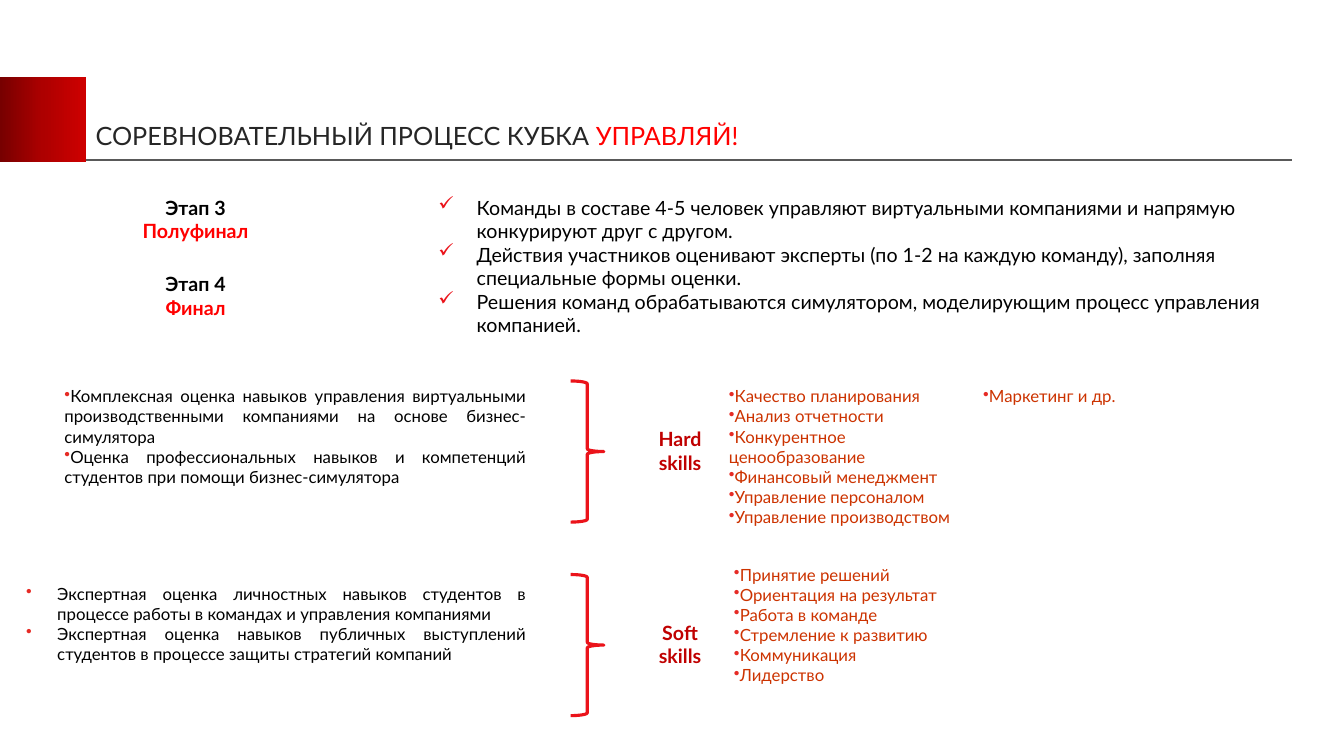
import copy

import pptx
import pptx.dml.color
import pptx.enum.shapes
import pptx.enum.text
import pptx.oxml.ns
import pptx.oxml.xmlchemy
import pptx.util

PX = 9144  # EMU in one px, 100 px to the inch
ALIGN = pptx.enum.text.PP_ALIGN
SHAPE = pptx.enum.shapes.MSO_SHAPE
qn = pptx.oxml.ns.qn
element = pptx.oxml.xmlchemy.OxmlElement


class Theme:
    face = "Lato"
    title, head, body = 18, 14, 12
    black, gray, rule = "000000", "262626", "595959"
    red, dark, rust = "FF0000", "C00000", "CC3300"
    brace, dot = "EB131A", "E62B25"
    fade = ((0, "770000"), (0.5, "AD0000"), (1, "CE0000"))


def emu(*sizes):
    return [pptx.util.Emu(size * PX) for size in sizes]


def rgb(color):
    return pptx.dml.color.RGBColor.from_string(color)


def apply(target, values):
    for name, value in values.items():
        setattr(target, name, value)


def add_mark(para, mark, color, left, indent):
    """Give a paragraph a coloured bullet and its indents in px."""
    props = para._p.get_or_add_pPr()
    props.set("marL", str(left * PX))
    props.set("indent", str(indent * PX))
    tint = element("a:buClr")
    value = element("a:srgbClr")
    value.set("val", color)
    tint.append(value)
    sign = element("a:buChar")
    sign.set("char", mark)
    props.extend([tint, sign])


def add_text(slide, box, lines, size, bold=False, align=ALIGN.LEFT,
             mark=None, cols=1):
    """Each line is a list of (text, colour) runs."""
    frame = slide.shapes.add_textbox(*emu(*box)).text_frame
    apply(frame, {"word_wrap": True,
                  "auto_size": pptx.enum.text.MSO_AUTO_SIZE.SHAPE_TO_FIT_TEXT})
    if cols > 1:
        frame._txBody.bodyPr.set("numCol", str(cols))
    for index, line in enumerate(lines):
        para = frame.add_paragraph() if index else frame.paragraphs[0]
        para.alignment = align
        if mark:
            add_mark(para, *mark)
        for text, color in line:
            run = para.add_run()
            run.text = text
            apply(run.font, {"name": Theme.face, "bold": bold,
                             "size": pptx.util.Pt(size)})
            run.font.color.rgb = rgb(color)


def add_label(slide, box, *line):
    add_text(slide, box, [[run] for run in line], Theme.head, True, ALIGN.CENTER)


def add_list(slide, box, items, color, mark, size=Theme.body, **form):
    add_text(slide, box, [[(item, color)] for item in items], size,
             mark=mark, **form)


def add_block(slide, box):
    block = slide.shapes.add_shape(SHAPE.RECTANGLE, *emu(*box))
    block.shadow.inherit = False
    block.line.fill.background()
    block.fill.gradient()
    block.fill.gradient_angle = 0
    stops = block._element.spPr.find(".//" + qn("a:gsLst"))
    stops.insert(1, copy.deepcopy(stops[0]))
    for stop, (place, color) in zip(block.fill.gradient_stops, Theme.fade):
        stop.position = place
        stop.color.rgb = rgb(color)


def add_rule(slide, ends):
    rule = slide.shapes.add_connector(
        pptx.enum.shapes.MSO_CONNECTOR.STRAIGHT, *emu(*ends))
    rule.line.color.rgb = rgb(Theme.rule)
    rule.line.width = pptx.util.Pt(1.5)
    rule._element.spPr.append(element("a:effectLst"))


def add_brace(slide, box):
    brace = slide.shapes.add_shape(SHAPE.RIGHT_BRACE, *emu(*box))
    brace.shadow.inherit = False
    brace.fill.background()
    brace.line.color.rgb = rgb(Theme.brace)
    brace.line.width = pptx.util.Pt(2.25)


def main():
    deck = pptx.Presentation()
    deck.slide_width, deck.slide_height = emu(1333, 750)
    slide = deck.slides.add_slide(deck.slide_layouts[6])

    # Header
    add_block(slide, (0, 76, 85, 85))
    add_text(slide, (85, 114, 1213, 40),
             [[("СОРЕВНОВАТЕЛЬНЫЙ ПРОЦЕСС КУБКА ", Theme.gray),
               ("УПРАВЛЯЙ!", Theme.red)]], Theme.title)
    add_rule(slide, (85, 159, 1281, 159))

    # Stages and their rules
    for top, stage, name in ((189, "Этап 3", "Полуфинал"),
                             (265, "Этап 4", "Финал")):
        add_label(slide, (89, top, 210, 57),
                  (stage, Theme.black), (name, Theme.red))
    add_list(slide, (425, 189, 856, 151), (
        "Команды в составе 4-5 человек управляют виртуальными компаниями "
        "и напрямую конкурируют друг с другом.",
        "Действия участников оценивают эксперты (по 1-2 на каждую команду), "
        "заполняя специальные формы оценки.",
        "Решения команд обрабатываются симулятором, моделирующим процесс "
        "управления компанией.",
    ), Theme.black, ("✓", Theme.brace, 38, -38), Theme.head)

    # What is assessed
    add_list(slide, (54, 378, 478, 138), (
        "Комплексная оценка навыков управления виртуальными "
        "производственными компаниями на основе бизнес-симулятора",
        "Оценка профессиональных навыков и компетенций студентов "
        "при помощи бизнес-симулятора",
    ), Theme.black, ("•", Theme.dot, 0, -31), align=ALIGN.JUSTIFY)
    add_list(slide, (16, 574, 516, 91), (
        "Экспертная оценка личностных навыков студентов в процессе работы "
        "в командах и управления компаниями",
        "Экспертная оценка навыков публичных выступлений студентов "
        "в процессе защиты стратегий компаний",
    ), Theme.black, ("•", Theme.dot, 31, -31), align=ALIGN.JUSTIFY)

    # Braces and skill groups
    for top, kind in ((378, "Hard"), (570, "Soft")):
        add_brace(slide, (566, top, 33, 140))
        add_label(slide, (615, top + 41, 119, 57),
                  (kind, Theme.dark), ("skills", Theme.dark))

    # Skills
    mark = ("•", Theme.dot, 0, -12)
    add_list(slide, (713, 378, 524, 151), (
        "Качество планирования", "Анализ отчетности",
        "Конкурентное ценообразование", "Финансовый менеджмент",
        "Управление персоналом", "Управление производством",
        "Маркетинг и др.",
    ), Theme.rust, mark, align=ALIGN.JUSTIFY, cols=2)
    add_list(slide, (718, 555, 269, 131), (
        "Принятие решений", "Ориентация на результат", "Работа в команде",
        "Стремление к развитию", "Коммуникация", "Лидерство",
    ), Theme.rust, mark)

    deck.save("out.pptx")


if __name__ == "__main__":
    main()
